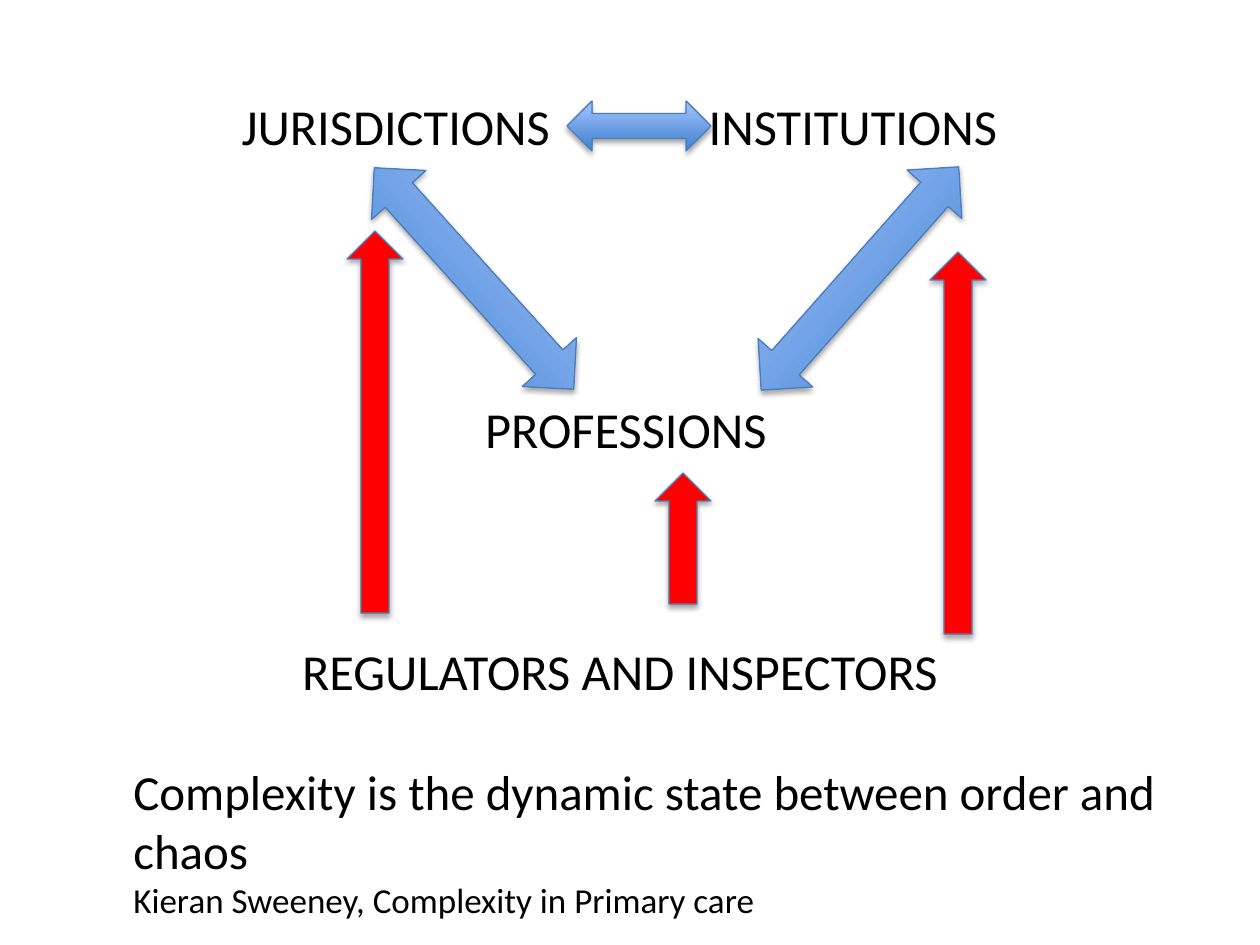
import pptx
import pptx.util
import pptx.dml.color
import pptx.enum.shapes
import pptx.enum.text
import pptx.oxml
import pptx.oxml.ns

PX = 914400 / 126
COLORS = {"text": "000000", "red": "FF0000", "line": "4B7EBC", "dark": "3F80CE", "light": "A4C4FF"}
SHADOW = (
    f'<a:effectLst {pptx.oxml.ns.nsdecls("a")}>'
    '<a:outerShdw blurRad="39370" dist="22860" dir="5400000" rotWithShape="0">'
    '<a:srgbClr val="000000"><a:alpha val="35000"/></a:srgbClr>'
    '</a:outerShdw></a:effectLst>'
)


def rgb(name):
    return pptx.dml.color.RGBColor.from_string(COLORS[name])


def add_text(box, lines, alignment, anchor):
    shape = slide.shapes.add_textbox(*[round(value * PX) for value in box])
    frame = shape.text_frame
    frame.word_wrap = True
    frame.vertical_anchor = anchor
    for index, (text, size) in enumerate(lines):
        paragraph = frame.add_paragraph() if index else frame.paragraphs[0]
        paragraph.alignment = alignment
        run = paragraph.add_run()
        run.text = text
        run.font.name = "Calibri"
        run.font.size = pptx.util.Pt(size)
        run.font.color.rgb = rgb("text")


presentation = pptx.Presentation()
presentation.slide_width = pptx.util.Inches(10)
presentation.slide_height = pptx.util.Inches(7.5)
slide = presentation.slides.add_slide(presentation.slide_layouts[6])

ALIGN = pptx.enum.text.PP_ALIGN
ANCHOR = pptx.enum.text.MSO_ANCHOR
labels = [
    ("JURISDICTIONS", 396, 125, 350),
    ("INSTITUTIONS", 853, 125, 350),
    ("PROFESSIONS", 626, 428, 350),
    ("REGULATORS AND INSPECTORS", 620, 670, 700),
]
for text, center, middle, width in labels:
    add_text((center - width // 2, middle - 37, width, 74), [(text, 28.8)], ALIGN.CENTER, ANCHOR.MIDDLE)

SHAPE = pptx.enum.shapes.MSO_SHAPE
arrows = [
    (SHAPE.LEFT_RIGHT_ARROW, 567, 101, 144, 50, 0),
    (SHAPE.LEFT_RIGHT_ARROW, 325, 242, 298, 73, 48),
    (SHAPE.LEFT_RIGHT_ARROW, 711, 242, 298, 73, 311.5),
    (SHAPE.UP_ARROW, 347, 231, 56, 382, 0),
    (SHAPE.UP_ARROW, 930, 252, 56, 382, 0),
    (SHAPE.UP_ARROW, 655, 473, 56, 131, 0),
]
for kind, left, top, width, height, rotation in arrows:
    arrow = slide.shapes.add_shape(kind, *[round(value * PX) for value in (left, top, width, height)])
    arrow.rotation = rotation
    if kind == SHAPE.UP_ARROW:
        arrow.fill.solid()
        arrow.fill.fore_color.rgb = rgb("red")
    else:
        arrow.fill.gradient()
        arrow.fill.gradient_angle = 90
        for stop, name in zip(arrow.fill.gradient_stops, ("dark", "light")):
            stop.color.rgb = rgb(name)
    arrow.line.color.rgb = rgb("line")
    arrow.line.width = pptx.util.Pt(0.75)
    arrow._element.spPr.append(pptx.oxml.parse_xml(SHADOW))

quote = [
    ("Complexity is the dynamic state between order and chaos", 28),
    ("Kieran Sweeney, Complexity in Primary care", 20),
]
add_text((121, 755, 1071, 174), quote, ALIGN.LEFT, ANCHOR.TOP)

presentation.save("out.pptx")
